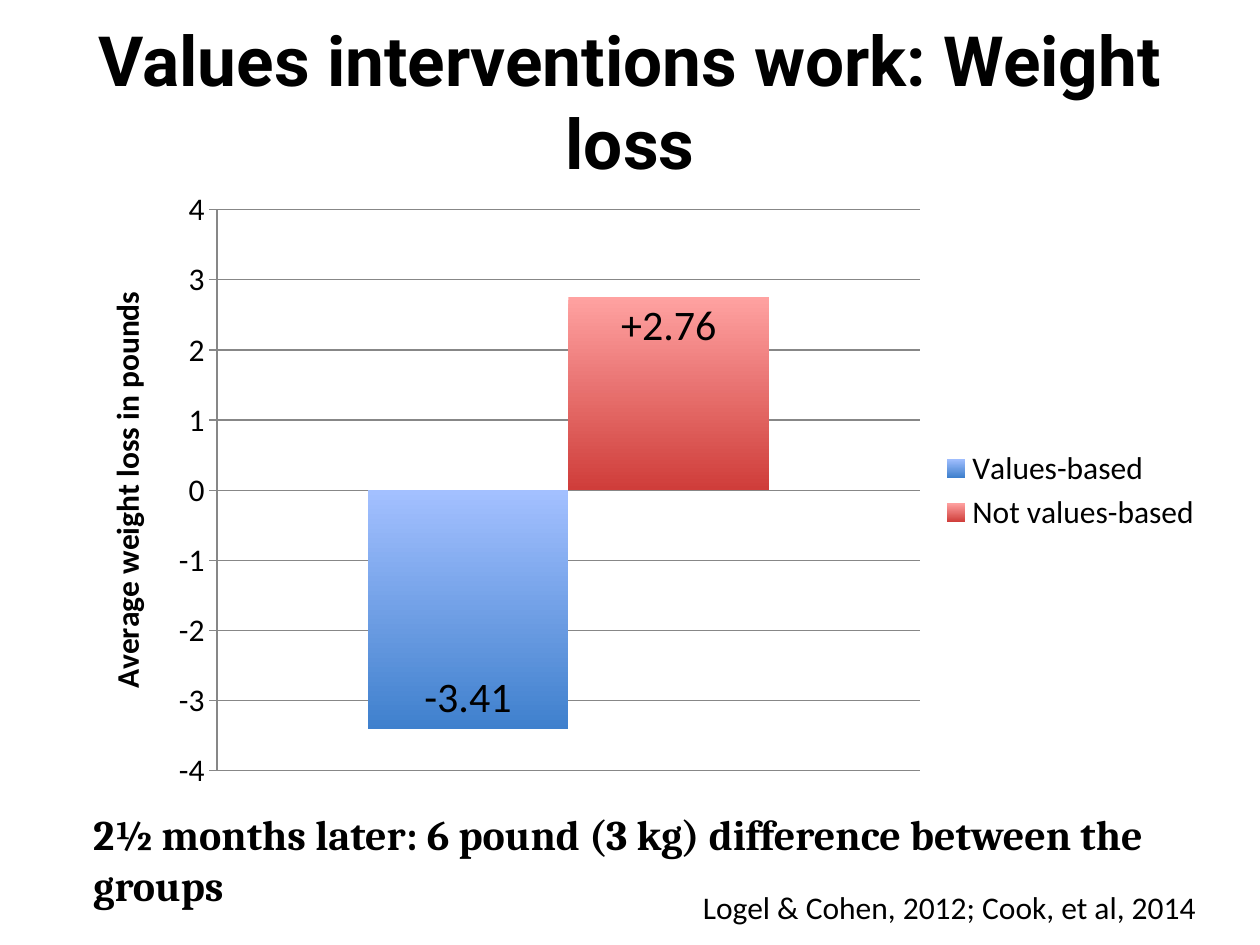
from lxml.etree import SubElement
from pptx import Presentation
from pptx.chart.data import CategoryChartData as ChartData
from pptx.dml.color import RGBColor as Rgb
from pptx.enum.chart import XL_CHART_TYPE as Kind, XL_LABEL_POSITION as Spot
from pptx.enum.chart import XL_LEGEND_POSITION as Side, XL_TICK_LABEL_POSITION as Tick
from pptx.enum.chart import XL_TICK_MARK as Mark
from pptx.enum.text import MSO_ANCHOR as Anchor, PP_ALIGN as Align
from pptx.oxml.ns import qn
from pptx.util import Cm, Pt

INK = {"text": "000000", "grid": "878787"}
TEXTS = [
    dict(text="Values interventions work: Weight loss", box=(1.27, 0.43, 22.86, 3.18),
         font=dict(name="Roboto", size=Pt(39.6), bold=True),
         align=Align.CENTER, anchor=Anchor.MIDDLE, wrap=True),
    dict(text="2½ months later: 6 pound (3 kg) difference between the groups",
         box=(1.63, 16.18, 22.5, 2.31),
         font=dict(name="Cambria", size=Pt(24), bold=True),
         align=Align.LEFT, anchor=Anchor.TOP, wrap=True),
    dict(text="Logel & Cohen, 2012; Cook, et al, 2014", box=(13.92, 17.78, 10.57, 1.02),
         font=dict(name="Calibri", size=Pt(18), bold=False),
         align=Align.LEFT, anchor=Anchor.TOP, wrap=False),
]
BARS = [
    ("Values-based", -3.41, ("A3C0FF", "3F80CD")),
    ("Not values-based", 2.76, ("FFA2A1", "CF3D3A")),
]
CHART = (1.63, 3.6, 22.86, 12.57)
PLOT = dict(x=0.12, y=0.05, w=0.62, h=0.9)
YTITLE = "Average weight loss in pounds"


def put(obj, **vals):
    """Set each named attribute of obj."""
    for key, val in vals.items():
        setattr(obj, key, val)


def style(font, **vals):
    put(font, **vals)
    font.color.rgb = Rgb.from_string(INK["text"])


def add_text(slide, item):
    frame = slide.shapes.add_textbox(*map(Cm, item["box"])).text_frame
    put(frame, word_wrap=item["wrap"], vertical_anchor=item["anchor"])
    para = frame.paragraphs[0]
    para.alignment = item["align"]
    run = para.add_run()
    run.text = item["text"]
    style(run.font, **item["font"])


def fix_plot(chart):
    """Pin the inner plot area to fractions of the chart."""
    area = chart.plots[0]._element.getparent()
    layout = area.find(qn("c:layout"))
    if layout is None:
        layout = SubElement(area, qn("c:layout"))
        area.insert(0, layout)
    manual = SubElement(layout, qn("c:manualLayout"))
    parts = dict(layoutTarget="inner", xMode="edge", yMode="edge", **PLOT)
    for tag, val in parts.items():
        SubElement(manual, qn("c:" + tag)).set("val", str(val))


def add_bars(slide):
    data = ChartData()
    data.categories = ["1"]
    for name, val, _ in BARS:
        data.add_series(name, [val])
    chart = slide.shapes.add_chart(
        Kind.COLUMN_CLUSTERED, *map(Cm, CHART), data).chart
    put(chart, has_title=False, has_legend=True)
    style(chart.font, name="Calibri", size=Pt(18))
    put(chart.legend, position=Side.RIGHT, include_in_layout=False)
    chart.category_axis.visible = False

    axis = chart.value_axis
    put(axis, minimum_scale=-4, maximum_scale=4, major_unit=1,
        major_tick_mark=Mark.OUTSIDE, minor_tick_mark=Mark.NONE,
        tick_label_position=Tick.NEXT_TO_AXIS)
    for line in (axis.format.line, axis.major_gridlines.format.line):
        line.width = Pt(0.75)
        line.color.rgb = Rgb.from_string(INK["grid"])
    run = axis.axis_title.text_frame.paragraphs[0].add_run()
    run.text = YTITLE
    style(run.font, name="Calibri", size=Pt(18), bold=True)

    plot = chart.plots[0]
    put(plot, gap_width=150, overlap=0, vary_by_categories=False)
    for bar, (_, _, shades) in zip(plot.series, BARS):
        bar.invert_if_negative = False
        fill = bar.format.fill
        fill.gradient()
        fill.gradient_angle = 270
        for stop, shade in zip(fill.gradient_stops, shades):
            stop.color.rgb = Rgb.from_string(shade)
        put(bar.data_labels, show_value=True, position=Spot.INSIDE_END,
            number_format="+0.00;-0.00", number_format_is_linked=False)
        style(bar.data_labels.font, name="Calibri", size=Pt(24))
    fix_plot(chart)


def main():
    deck = Presentation()
    put(deck, slide_width=Cm(25.4), slide_height=Cm(19.05))
    slide = deck.slides.add_slide(deck.slide_layouts[6])
    add_bars(slide)
    for item in TEXTS:
        add_text(slide, item)
    deck.save("out.pptx")


if __name__ == "__main__":
    main()
